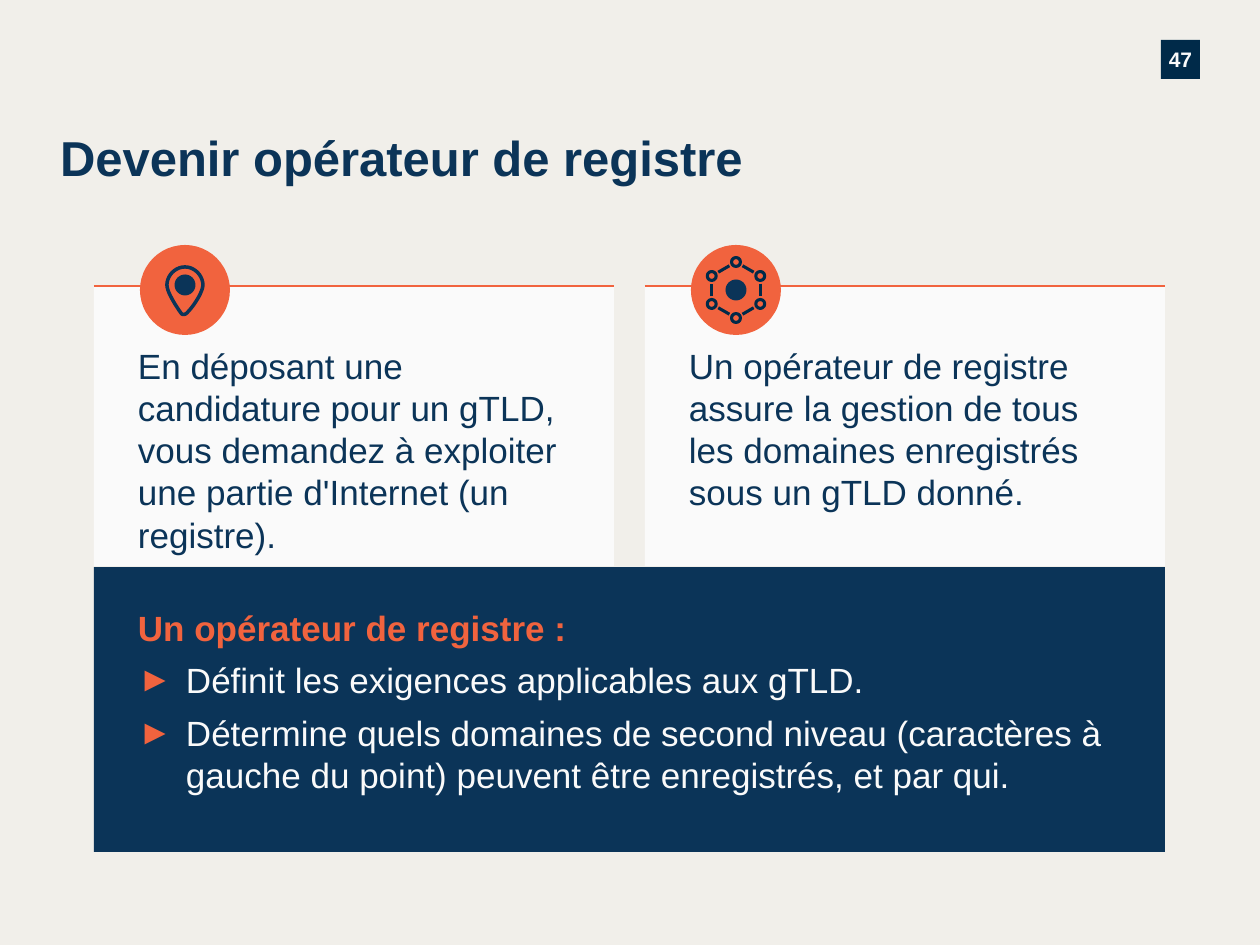
from math import cos, radians, sin

from lxml.etree import SubElement
from pptx import Presentation
from pptx.dml.color import RGBColor
from pptx.enum.shapes import MSO_CONNECTOR as Line, MSO_SHAPE as Kind
from pptx.enum.text import MSO_ANCHOR as Anchor, PP_ALIGN as Align
from pptx.oxml.ns import qn
from pptx.util import Emu, Pt

PX = 914400 // 126
SAND = RGBColor(0xF1, 0xEF, 0xEA)
WHITE = RGBColor(0xFA, 0xFA, 0xFA)
NAVY = RGBColor(0x0B, 0x34, 0x58)
DARK = RGBColor(0x00, 0x2A, 0x49)
CORAL = RGBColor(0xF1, 0x63, 0x3E)

TITLE = "Devenir opérateur de registre"
PAGE = "47"
CARDS = [
    "En déposant une candidature pour un gTLD, vous demandez à exploiter "
    "une partie d'Internet (un registre).",
    "Un opérateur de registre assure la gestion de tous les domaines "
    "enregistrés sous un gTLD donné.",
]
HEAD = "Un opérateur de registre :"
DUTIES = [
    "Définit les exigences applicables aux gTLD.",
    "Détermine quels domaines de second niveau (caractères à gauche du "
    "point) peuvent être enregistrés, et par qui.",
]

LEFT, WIDE, GAP = 94, 1071, 31
CARD_W, CARD_H = (WIDE - GAP) // 2, 280
CARD_Y, PANEL_Y, PANEL_H = 286, 567, 285
BADGE_X, BADGE_Y, BADGE_R = 91, 290, 45
# Pin outline as cubic curves, in px from the badge centre
PIN_TOP = (2, 23)
PIN = [
    ((0, 25), (-3, 25), (-4, 23)),
    ((-9, 16), (-18, 2), (-18, -5)),
    ((-18, -14), (-10, -23), (0, -23)),
    ((10, -23), (18, -14), (18, -5)),
    ((18, 2), (9, 16), (2, 23)),
]


def px(*nums):
    return [Emu(round(n * PX)) for n in nums]


def shape(kind, x, y, w, h, fill=None, line=None, width=1.75):
    item = slide.shapes.add_shape(kind, *px(x, y, w, h))
    style(item, fill, line, width)
    return item


def style(item, fill, line, width):
    item.shadow.inherit = False
    if fill is None:
        item.fill.background()
    else:
        item.fill.solid()
        item.fill.fore_color.rgb = fill
    if line is None:
        item.line.fill.background()
    else:
        item.line.color.rgb = line
        item.line.width = Pt(width)


def disc(x, y, r, **look):
    return shape(Kind.OVAL, x - r, y - r, 2 * r, 2 * r, **look)


def rule(x1, y1, x2, y2, color, width):
    line = slide.shapes.add_connector(Line.STRAIGHT, *px(x1, y1, x2, y2))
    line.line.color.rgb = color
    line.line.width = Pt(width)
    SubElement(line._element.spPr, qn("a:effectLst"))


def frame(item, pads, anchor=Anchor.TOP):
    text = item.text_frame
    text.word_wrap = True
    text.vertical_anchor = anchor
    (text.margin_left, text.margin_top,
     text.margin_right, text.margin_bottom) = px(*pads)
    return text


def write(para, words, size, color, bold=False, align=Align.LEFT):
    para.text = words
    para.alignment = align
    font = para.runs[0].font
    font.name, font.size, font.bold = "Arial", Pt(size), bold
    font.color.rgb = color


def bullet(para):
    props = para._p.get_or_add_pPr()
    props.set("marL", str(48 * PX))
    props.set("indent", str(-48 * PX))
    tint = SubElement(props, qn("a:buClr"))
    SubElement(tint, qn("a:srgbClr")).set("val", str(CORAL))
    SubElement(props, qn("a:buFont")).set("typeface", "Arial")
    SubElement(props, qn("a:buChar")).set("char", "►")


def curve(start, parts, steps=10):
    """Points along a chain of cubic curves."""
    for one, two, end in parts:
        for n in range(1, steps + 1):
            t = n / steps
            u = 1 - t
            yield tuple(
                u**3 * a + 3 * u * u * t * b + 3 * u * t * t * c + t**3 * d
                for a, b, c, d in zip(start, one, two, end))
        start = end


def draw_pin(x, y):
    disc(x, y - 5, 10.5, fill=NAVY)
    pen = slide.shapes.build_freeform(
        round((x + PIN_TOP[0]) * PX), round((y + PIN_TOP[1]) * PX))
    pen.add_line_segments(
        [px(x + a, y + b) for a, b in curve(PIN_TOP, PIN)], close=True)
    style(pen.convert_to_shape(), None, NAVY, 2)


def draw_net(x, y):
    ring = [(x + 28 * cos(radians(a)), y + 28 * sin(radians(a)))
            for a in range(-90, 270, 60)]
    for (x1, y1), (x2, y2) in zip(ring, ring[1:] + ring[:1]):
        dx, dy = (x2 - x1) * 0.27, (y2 - y1) * 0.27
        rule(x1 + dx, y1 + dy, x2 - dx, y2 - dy, DARK, 1.75)
    for node in ring:
        disc(*node, 4.5, line=DARK)
    disc(x, y, 10.5, fill=NAVY)


deck = Presentation()
deck.slide_width, deck.slide_height = px(1260, 945)
slide = deck.slides.add_slide(deck.slide_layouts[5])
slide.background.fill.solid()
slide.background.fill.fore_color.rgb = SAND

title = slide.shapes.title
title.left, title.top, title.width, title.height = px(60, 124, 711, 66)
write(frame(title, (0, 0, 0, 0), Anchor.MIDDLE).paragraphs[0],
      TITLE, 28, NAVY, True)

page = shape(Kind.RECTANGLE, 1161, 40, 39, 39, fill=DARK)
write(frame(page, (0, 0, 0, 0), Anchor.MIDDLE).paragraphs[0],
      PAGE, 12, WHITE, True, Align.CENTER)

for n, (words, draw) in enumerate(zip(CARDS, (draw_pin, draw_net))):
    x = LEFT + n * (CARD_W + GAP)
    card = shape(Kind.RECTANGLE, x, CARD_Y, CARD_W, CARD_H, fill=WHITE)
    para = frame(card, (44, 59, 49, 38)).paragraphs[0]
    write(para, words, 20, NAVY)
    para.line_spacing = Pt(24)
    rule(x, CARD_Y, x + CARD_W, CARD_Y, CORAL, 1.25)
    disc(x + BADGE_X, BADGE_Y, BADGE_R, fill=CORAL)
    draw(x + BADGE_X, BADGE_Y)

panel = shape(Kind.RECTANGLE, LEFT, PANEL_Y, WIDE, PANEL_H, fill=NAVY)
text = frame(panel, (44, 39, 59, 38))
write(text.paragraphs[0], HEAD, 20, CORAL, True)
text.paragraphs[0].line_spacing = Pt(24)
for duty in DUTIES:
    para = text.add_paragraph()
    write(para, duty, 20, WHITE)
    para.line_spacing = Pt(24)
    para.space_before = Pt(6)
    bullet(para)

deck.save("out.pptx")
